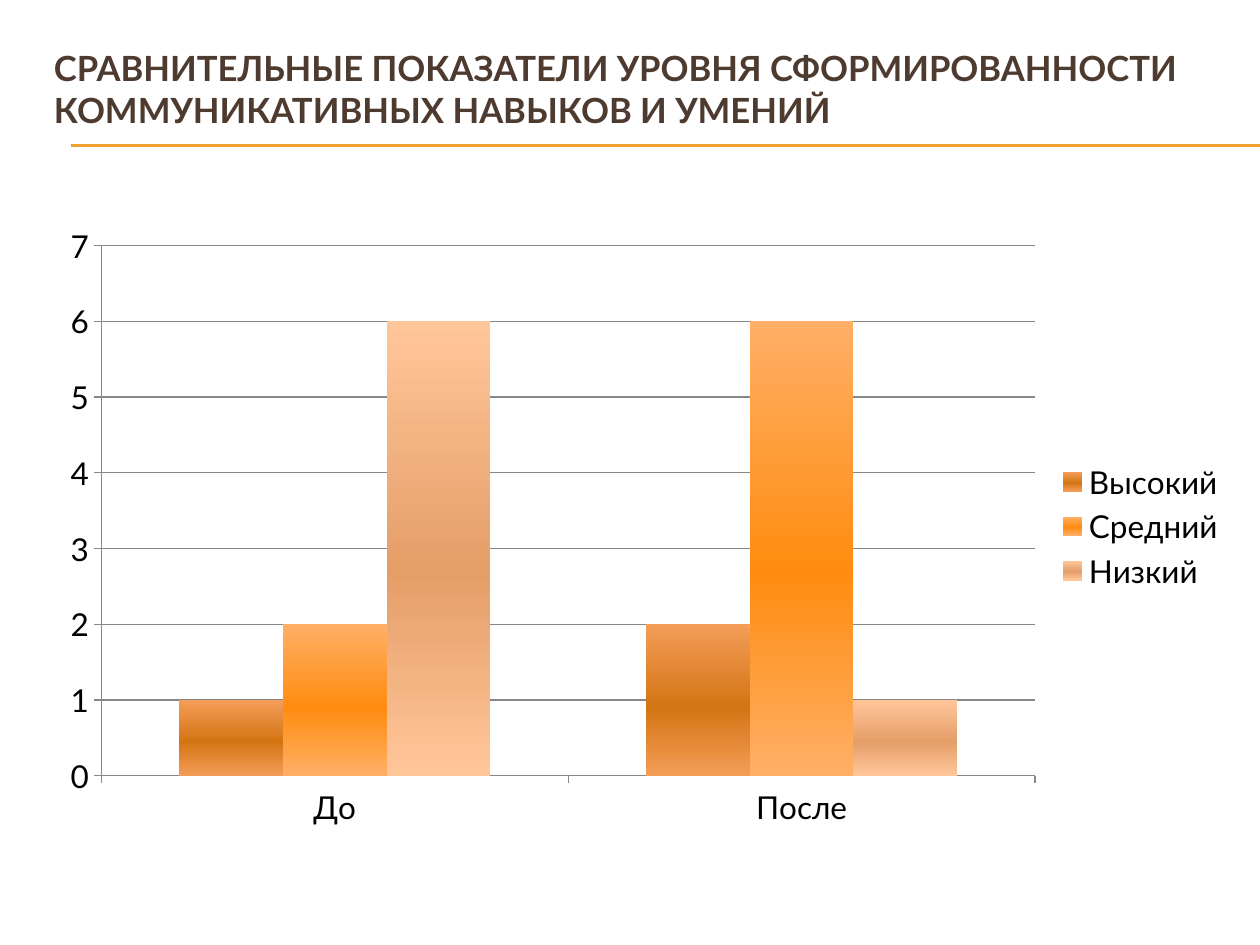
from copy import deepcopy
from dataclasses import dataclass

from pptx import Presentation
from pptx.chart.data import CategoryChartData
from pptx.dml.color import RGBColor
from pptx.enum.chart import XL_CHART_TYPE as ChartType
from pptx.enum.chart import XL_LEGEND_POSITION as LegendPosition
from pptx.enum.chart import XL_TICK_MARK as TickMark
from pptx.enum.shapes import MSO_CONNECTOR as Connector
from pptx.enum.text import MSO_ANCHOR as Anchor
from pptx.oxml import parse_xml
from pptx.oxml.ns import nsdecls
from pptx.util import Inches, Pt

WIDTH, HEIGHT = Inches(10), Inches(7.5)
LEFT, SPAN = 0.033, 0.95  # shares of the slide width

TITLE = ("СРАВНИТЕЛЬНЫЕ ПОКАЗАТЕЛИ УРОВНЯ СФОРМИРОВАННОСТИ "
         "КОММУНИКАТИВНЫХ НАВЫКОВ И УМЕНИЙ")
CATEGORIES = ("До", "После")
LEVELS = {"Высокий": (1, 2), "Средний": (2, 6), "Низкий": (6, 1)}


@dataclass(frozen=True)
class Theme:
    font: str = "Lato"
    title_size: float = 19.8
    chart_size: float = 18
    title: str = "4E3B30"
    text: str = "000000"
    rule: str = "F0A22E"
    grid: str = "878787"
    # edge and middle colour of each column gradient
    columns: tuple = (("F39D58", "D47514"), ("FFAF66", "FF8C10"), ("FFC69A", "E59E68"))


THEME = Theme()


def color(value):
    return RGBColor.from_string(value)


def apply(target, values):
    for name, value in values.items():
        setattr(target, name, value)


def place(left, top, width, height):
    """Turn shares of the slide into lengths."""
    return [int(share * side) for share, side in
            zip((left, top, width, height), (WIDTH, HEIGHT) * 2)]


def style_font(font, size, value, bold=False):
    apply(font, {"name": THEME.font, "size": Pt(size), "bold": bold})
    font.color.rgb = color(value)


def style_line(line, value):
    line.color.rgb = color(value)
    line.width = Pt(0.75)


def add_title(page):
    box = page.shapes.add_textbox(*place(LEFT, 0.032, SPAN, 0.123))
    frame = box.text_frame
    apply(frame, {"word_wrap": True, "vertical_anchor": Anchor.MIDDLE})
    span = frame.paragraphs[0].add_run()
    span.text = TITLE
    style_font(span.font, THEME.title_size, THEME.title, bold=True)


def add_rule(page, top):
    left, y = Inches(0.56), Inches(top)
    rule = page.shapes.add_connector(Connector.STRAIGHT, left, y, WIDTH, y)
    style_line(rule.line, THEME.rule)
    rule.element.spPr.append(parse_xml(f"<a:effectLst {nsdecls('a')}/>"))


def shade_column(series, edge, middle):
    """Fill from edge colour through the middle colour and back."""
    fill = series.format.fill
    fill.gradient()
    fill.gradient_angle = 270
    for stop, value, position in zip(fill.gradient_stops, (edge, middle), (0, 0.55)):
        stop.color.rgb = color(value)
        stop.position = position
    stops = series.format.fill.gradient_stops
    stop_list = series._element.xpath(".//a:gsLst")[0]
    last = deepcopy(stop_list[0])
    last.set("pos", "100000")
    stop_list.append(last)


def fix_plot_area(chart, **shares):
    parts = "".join(f'<c:{name} val="{share}"/>' for name, share in shares.items())
    layout = parse_xml(
        f'<c:layout {nsdecls("c")}><c:manualLayout><c:layoutTarget val="inner"/>'
        f'<c:xMode val="edge"/><c:yMode val="edge"/>{parts}</c:manualLayout></c:layout>')
    area = chart._chartSpace.xpath(".//c:plotArea")[0]
    for old in area.xpath("./c:layout"):
        area.remove(old)
    area.insert(0, layout)


def style_axes(chart):
    for axis in (chart.category_axis, chart.value_axis):
        apply(axis, {"major_tick_mark": TickMark.OUTSIDE,
                     "minor_tick_mark": TickMark.NONE})
        style_line(axis.format.line, THEME.grid)
    apply(chart.value_axis, {"minimum_scale": 0, "maximum_scale": 7,
                             "major_unit": 1, "has_major_gridlines": True})
    style_line(chart.value_axis.major_gridlines.format.line, THEME.grid)


def add_level_chart(page):
    data = CategoryChartData()
    data.categories = CATEGORIES
    for level, values in LEVELS.items():
        data.add_series(level, values)
    chart = page.shapes.add_chart(
        ChartType.COLUMN_CLUSTERED, *place(LEFT, 0.227, SPAN, 0.66), data).chart
    apply(chart, {"has_title": False, "has_legend": True})
    apply(chart.legend, {"position": LegendPosition.RIGHT, "include_in_layout": False})
    style_font(chart.font, THEME.chart_size, THEME.text)
    style_axes(chart)
    plot = chart.plots[0]
    apply(plot, {"gap_width": 150, "overlap": 0, "vary_by_categories": False})
    for series, shades in zip(plot.series, THEME.columns):
        shade_column(series, *shades)
    fix_plot_area(chart, x=0.05, y=0.05, w=0.78, h=0.85)


def main():
    deck = Presentation()
    apply(deck, {"slide_width": WIDTH, "slide_height": HEIGHT})
    page = deck.slides.add_slide(deck.slide_layouts[6])
    for top in (1.15, 1.16):
        add_rule(page, top)
    add_title(page)
    add_level_chart(page)
    deck.save("out.pptx")


if __name__ == "__main__":
    main()
